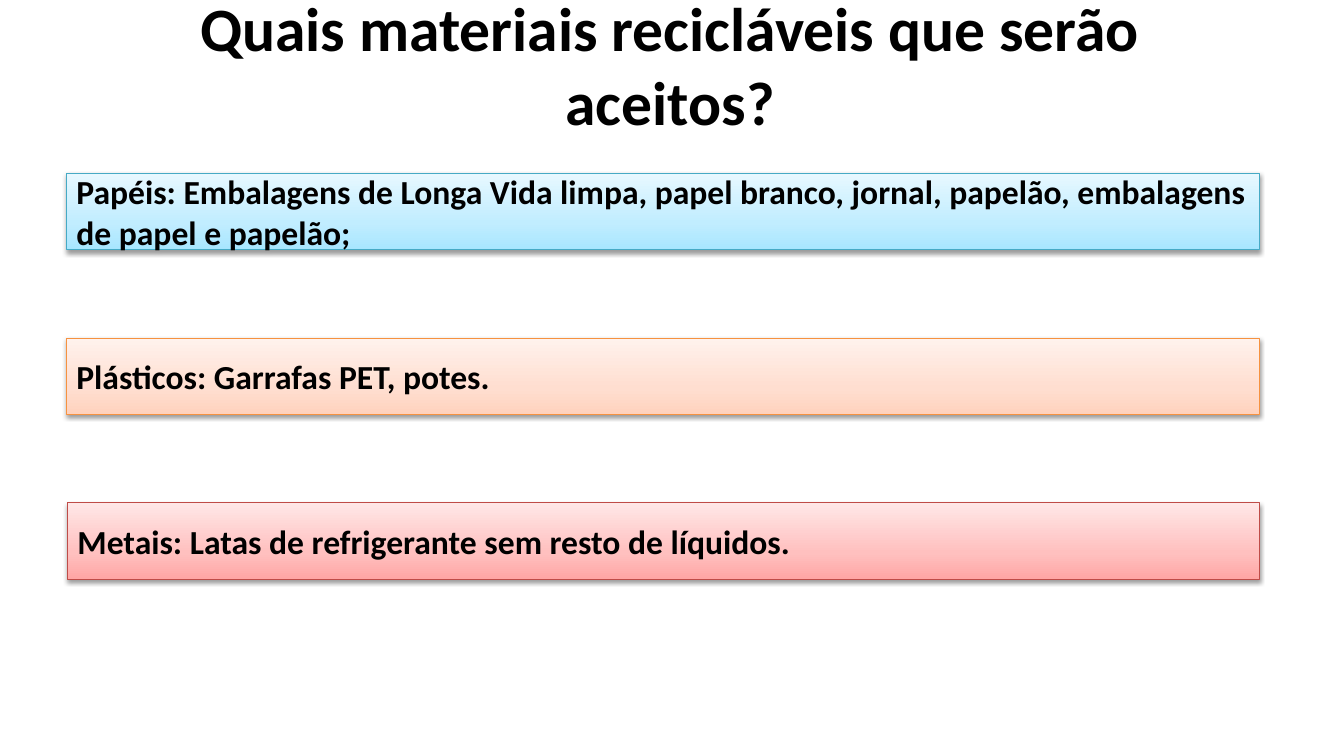
import copy
from dataclasses import dataclass

import pptx
import pptx.dml.color
import pptx.enum.shapes
import pptx.enum.text
import pptx.oxml
import pptx.oxml.ns
import pptx.util

Pt = pptx.util.Pt
PP_ALIGN = pptx.enum.text.PP_ALIGN
BLACK = "000000"
CARD_RIGHT, CARD_TOP, CARD_HEIGHT, CARD_PITCH = 900, 123.84, 54.72, 117.72
STOP_POSITIONS = (0, 0.35, 1)
FRAME = {
    "word_wrap": True,
    "auto_size": pptx.enum.text.MSO_AUTO_SIZE.NONE,
    "vertical_anchor": pptx.enum.text.MSO_ANCHOR.MIDDLE,
    "margin_left": Pt(7.2),
    "margin_right": Pt(7.2),
    "margin_top": Pt(3.6),
    "margin_bottom": Pt(3.6),
}


@dataclass
class Card:
    text: str
    left: float
    stops: tuple[str, str, str]
    line: str


CARDS = [
    Card("Papéis: Embalagens de Longa Vida limpa, papel branco, jornal, papelão, embalagens de papel e papelão;",
         47.52, ("A7E6FF", "C1EDFF", "E7F8FF"), "46AAC5"),
    Card("Plásticos: Garrafas PET, potes.",
         47.52, ("FFD2BD", "FFDED0", "FFF2ED"), "F69240"),
    Card("Metais: Latas de refrigerante sem resto de líquidos.",
         48.24, ("FFA6A5", "FFC0BF", "FFE7E7"), "BF4C48"),
]


def rgb(value: str) -> pptx.dml.color.RGBColor:
    return pptx.dml.color.RGBColor.from_string(value)


def apply(target: object, values: dict) -> None:
    for name, value in values.items():
        setattr(target, name, value)


def write(sp, text: str, size: float, align: PP_ALIGN) -> None:
    tf = sp.text_frame
    apply(tf, FRAME)
    p = tf.paragraphs[0]
    p.alignment = align
    r = p.add_run()
    r.text = text
    apply(r.font, {"name": "Calibri", "size": Pt(size), "bold": True})
    r.font.color.rgb = rgb(BLACK)


def fill_gradient(sp, colors: tuple[str, str, str]) -> None:
    sp.fill.gradient()
    sp.fill.gradient_angle = 90
    gs_list = sp.element.spPr.find(".//" + pptx.oxml.ns.qn("a:gsLst"))
    gs_list.append(copy.deepcopy(gs_list[-1]))
    for stop, position, color in zip(sp.fill.gradient_stops, STOP_POSITIONS, colors):
        stop.position = position
        stop.color.rgb = rgb(color)


def add_shadow(sp) -> None:
    sp.shadow.inherit = False
    effects = sp.element.spPr.find(pptx.oxml.ns.qn("a:effectLst"))
    effects.append(pptx.oxml.parse_xml(
        f'<a:outerShdw {pptx.oxml.ns.nsdecls("a")} blurRad="{Pt(3.15)}" dist="{Pt(1.6)}" '
        f'dir="5400000" rotWithShape="0"><a:srgbClr val="{rgb(BLACK)}">'
        '<a:alpha val="38000"/></a:srgbClr></a:outerShdw>'))


def add_card(slide, card: Card, top: float) -> None:
    sp = slide.shapes.add_shape(
        pptx.enum.shapes.MSO_SHAPE.RECTANGLE, Pt(card.left), Pt(top),
        Pt(CARD_RIGHT - card.left), Pt(CARD_HEIGHT))
    fill_gradient(sp, card.stops)
    sp.line.color.rgb = rgb(card.line)
    sp.line.width = Pt(0.75)
    add_shadow(sp)
    write(sp, card.text, 24, PP_ALIGN.LEFT)


def main() -> None:
    prs = pptx.Presentation()
    apply(prs, {"slide_width": Pt(960), "slide_height": Pt(540)})
    slide = prs.slides.add_slide(prs.slide_layouts[5])
    title = slide.shapes.title
    apply(title, {"left": Pt(107.28), "top": Pt(4.32), "width": Pt(743.04), "height": Pt(82.8)})
    write(title, "Quais materiais recicláveis que serão aceitos?", 44, PP_ALIGN.CENTER)
    for i, card in enumerate(CARDS):
        add_card(slide, card, CARD_TOP + i * CARD_PITCH)
    prs.save("out.pptx")


if __name__ == "__main__":
    main()
